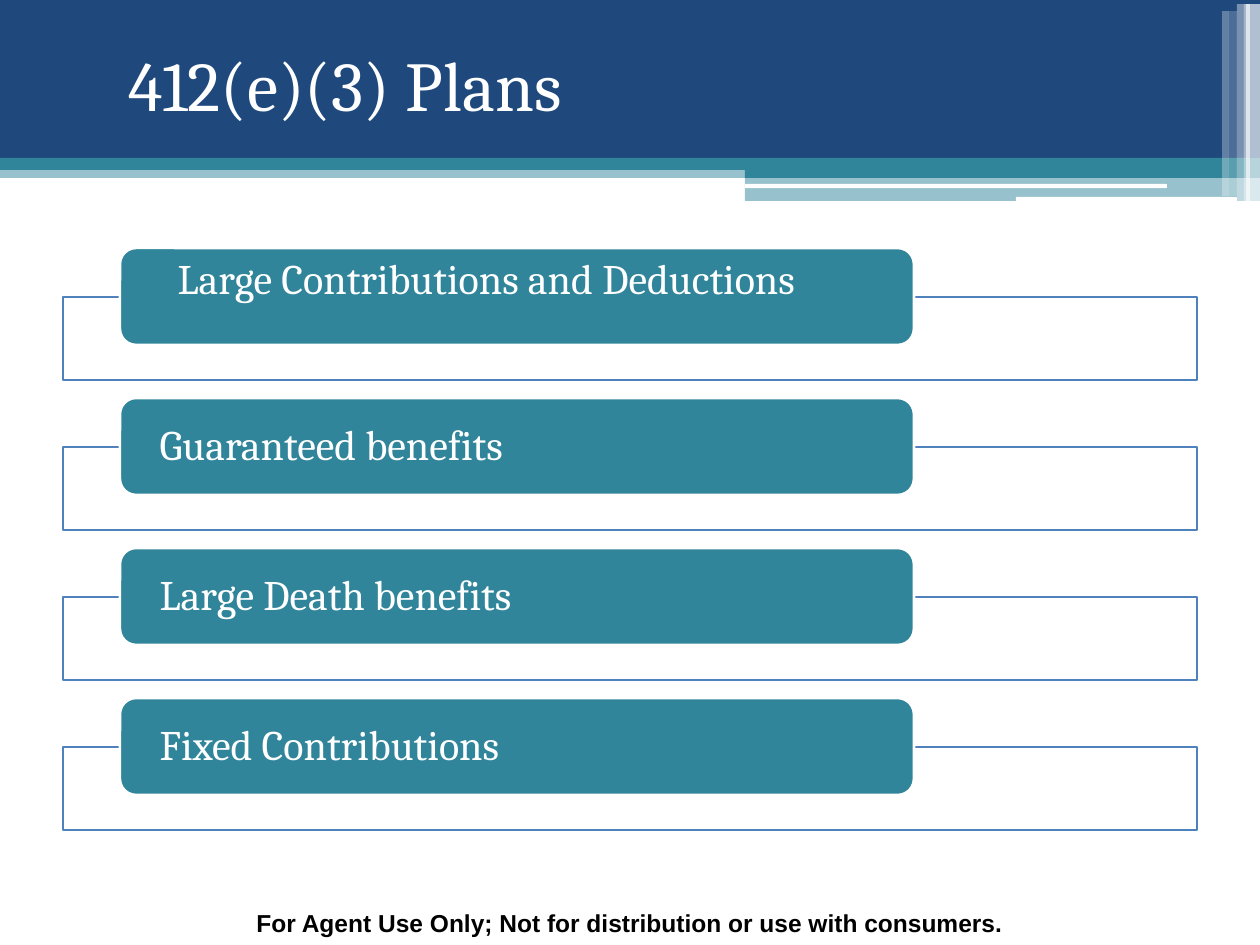
from typing import NamedTuple

from lxml import etree
from pptx import Presentation
from pptx.dml.color import RGBColor
from pptx.enum.shapes import MSO_SHAPE
from pptx.enum.text import MSO_ANCHOR, PP_ALIGN
from pptx.oxml.ns import qn
from pptx.util import Emu, Pt

RECT, ROUND = MSO_SHAPE.RECTANGLE, MSO_SHAPE.ROUNDED_RECTANGLE
LEFT, CENTER = PP_ALIGN.LEFT, PP_ALIGN.CENTER
TOP, MIDDLE = MSO_ANCHOR.TOP, MSO_ANCHOR.MIDDLE

WHITE = RGBColor(0xFF, 0xFF, 0xFF)
BLACK = RGBColor(0x00, 0x00, 0x00)
NAVY = RGBColor(0x1F, 0x49, 0x7D)
TEAL = RGBColor(0x31, 0x85, 0x9B)
BLUE = RGBColor(0x4F, 0x81, 0xBD)

FIRST_TAB, PITCH = 248, 150
PANEL_DROP = 49
TEXT_INSET = 35


class Box(NamedTuple):
    x: int
    y: int
    w: int
    h: int


class Band(NamedTuple):
    box: Box
    color: RGBColor
    alpha: int = 100
    kind: MSO_SHAPE = RECT


class Tab(NamedTuple):
    text: str
    indent: int = 0
    anchor: MSO_ANCHOR = MIDDLE


BANDS = [
    Band(Box(0, 166, 1260, 12), TEAL, 50),
    Band(Box(0, 0, 1260, 158), NAVY),
    Band(Box(0, 158, 1260, 12), TEAL),
    Band(Box(745, 165, 515, 13), TEAL),
    Band(Box(745, 177, 515, 24), TEAL, 50),
    Band(Box(745, 184, 422, 4), WHITE, kind=ROUND),
    Band(Box(1016, 197, 221, 5), WHITE, kind=ROUND),
    Band(Box(1252, 4, 8, 197), WHITE, 65),
    Band(Box(1246, 4, 6, 197), WHITE, 65),
    Band(Box(1244, 4, 6, 197), WHITE, 60),
    Band(Box(1237, 4, 7, 197), WHITE, 40),
    Band(Box(1229, 11, 8, 185), WHITE, 20),
    Band(Box(1222, 11, 7, 185), WHITE, 30),
]

TABS = [
    Tab("Large Contributions and Deductions", 18, TOP),
    Tab("Guaranteed benefits"),
    Tab("Large Death benefits"),
    Tab("Fixed Contributions"),
]


def px(n: int) -> Emu:
    return Emu(round(n * 914400 / 126))


def add_box(s, box: Box, color: RGBColor, alpha: int = 100, kind=RECT, line=None):
    sp = s.shapes.add_shape(kind, *map(px, box))
    sp.shadow.inherit = False
    sp.fill.solid()
    sp.fill.fore_color.rgb = color
    if alpha < 100:
        clr = sp.fill._xPr.find(".//" + qn("a:srgbClr"))
        etree.SubElement(clr, qn("a:alpha")).set("val", str(alpha * 1000))
    if line is None:
        sp.line.fill.background()
    else:
        sp.line.color.rgb = line
        sp.line.width = Pt(1.5)
    return sp


def write(sp, text: str, *, size: int, color=WHITE, font="Cambria", bold=False,
          align=LEFT, anchor=MIDDLE, insets=(13, 6, 13, 6), spacing=1.0) -> None:
    tf = sp.text_frame
    tf.word_wrap = True
    tf.vertical_anchor = anchor
    tf.margin_left, tf.margin_top, tf.margin_right, tf.margin_bottom = map(px, insets)
    p = tf.paragraphs[0]
    p.alignment = align
    p.line_spacing = spacing
    r = p.add_run()
    r.text = text
    r.font.name = font
    r.font.size = Pt(size)
    r.font.bold = bold
    r.font.color.rgb = color


def add_title(s, text: str) -> None:
    title = s.shapes.title
    title.left, title.top, title.width, title.height = map(px, Box(30, 10, 1134, 147))
    write(title, text, size=40, insets=(98, 6, 13, 6))
    s.shapes.element.append(title.element)


def add_tab(s, tab: Tab, y: int) -> None:
    add_box(s, Box(63, y + PANEL_DROP, 1134, 83), WHITE, 90, line=BLUE)
    sp = add_box(s, Box(120, y, 794, 97), TEAL, kind=ROUND, line=WHITE)
    write(sp, tab.text, size=24, anchor=tab.anchor, spacing=0.9,
          insets=(TEXT_INSET + tab.indent, 5, TEXT_INSET, 5))


def main() -> None:
    prs = Presentation()
    prs.slide_width, prs.slide_height = px(1260), px(945)
    s = prs.slides.add_slide(prs.slide_layouts[5])
    for band in BANDS:
        add_box(s, *band)
    footer = s.shapes.add_textbox(*map(px, Box(0, 902, 1260, 43)))
    write(footer, "For Agent Use Only; Not for distribution or use with consumers.",
          size=14, color=BLACK, font="Arial", bold=True, align=CENTER, anchor=TOP)
    add_title(s, "412(e)(3) Plans")
    for i, tab in enumerate(TABS):
        add_tab(s, tab, FIRST_TAB + i * PITCH)
    prs.save("out.pptx")


if __name__ == "__main__":
    main()
